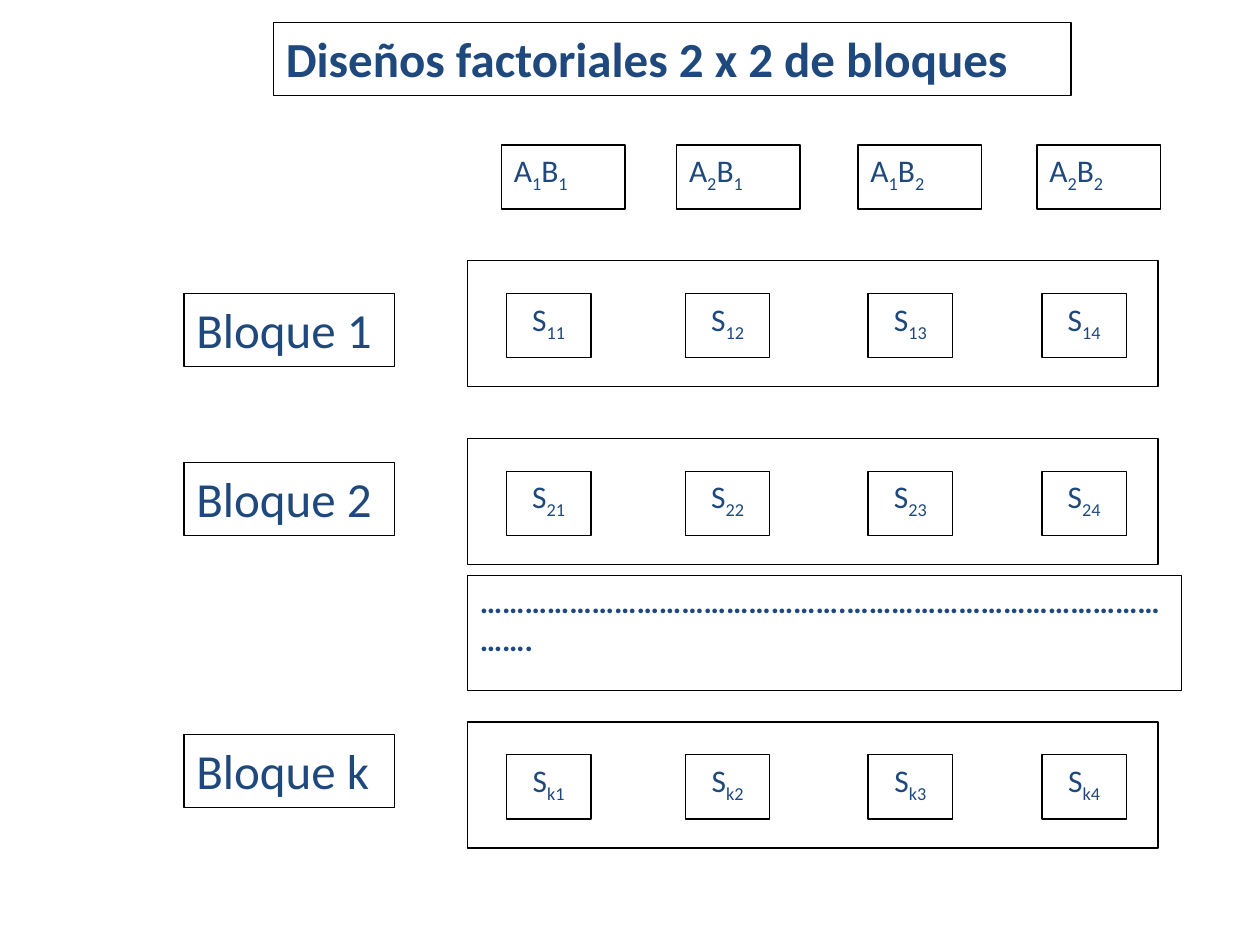
from pptx import Presentation
from pptx.dml.color import RGBColor
from pptx.enum.text import MSO_ANCHOR, PP_ALIGN
from pptx.util import Inches, Pt

NAVY = RGBColor(0x1F, 0x49, 0x7D)
BLACK = RGBColor(0, 0, 0)


def add_box(slide, x, y, w, h, parts=(), size=18, bold=False, align=PP_ALIGN.LEFT):
    """Draw an outlined text box whose every second part is a subscript."""
    s = slide.shapes.add_textbox(Inches(x), Inches(y), Inches(w), Inches(h))
    s.line.color.rgb = BLACK
    s.line.width = Pt(0.75)
    tf = s.text_frame
    tf.word_wrap = True
    tf.vertical_anchor = MSO_ANCHOR.TOP
    p = tf.paragraphs[0]
    p.alignment = align
    for i, part in enumerate(parts):
        r = p.add_run()
        r.text = part
        r.font.name = "Calibri"
        r.font.size = Pt(size)
        r.font.bold = bold
        r.font.color.rgb = NAVY
        if i % 2:
            r._r.get_or_add_rPr().set("baseline", "-25000")


def add_treatments(slide, x, y):
    """Place the row of factor combinations."""
    pairs = [(a, b) for b in "12" for a in "12"]
    for dx, (a, b) in zip((0, 1.39, 2.83, 4.25), pairs):
        add_box(slide, x + dx, y, 0.98, 0.51, ("A", a, "B", b))


def add_block(slide, x, y, name, label_y):
    """Place a block label, its frame and its four subjects."""
    add_box(slide, x - 2.25, label_y, 1.67, 0.58, (f"Bloque {name}",), size=28)
    add_box(slide, x, y, 5.48, 1)
    for n, dx in enumerate((0.31, 1.73, 3.18, 4.56), start=1):
        add_box(slide, x + dx, y + 0.26, 0.67, 0.51, ("S", f"{name}{n}"),
                align=PP_ALIGN.CENTER)


def main():
    """Build and save the slide."""
    prs = Presentation()
    prs.slide_width, prs.slide_height = Inches(10), Inches(7.5)
    slide = prs.slides.add_slide(prs.slide_layouts[6])
    add_box(slide, 2.17, 0.18, 6.33, 0.58,
            ("Diseños factoriales 2 x 2 de bloques",), size=28, bold=True)
    add_treatments(slide, 3.98, 1.15)
    for name, y, label_y in (("1", 2.07, 2.33), ("2", 3.48, 3.67), ("k", 5.73, 5.83)):
        add_block(slide, 3.71, y, name, label_y)
    add_box(slide, 3.71, 4.57, 5.67, 0.91,
            ("………………………………………….………………………………………….",), bold=True)
    prs.save("out.pptx")


if __name__ == "__main__":
    main()
